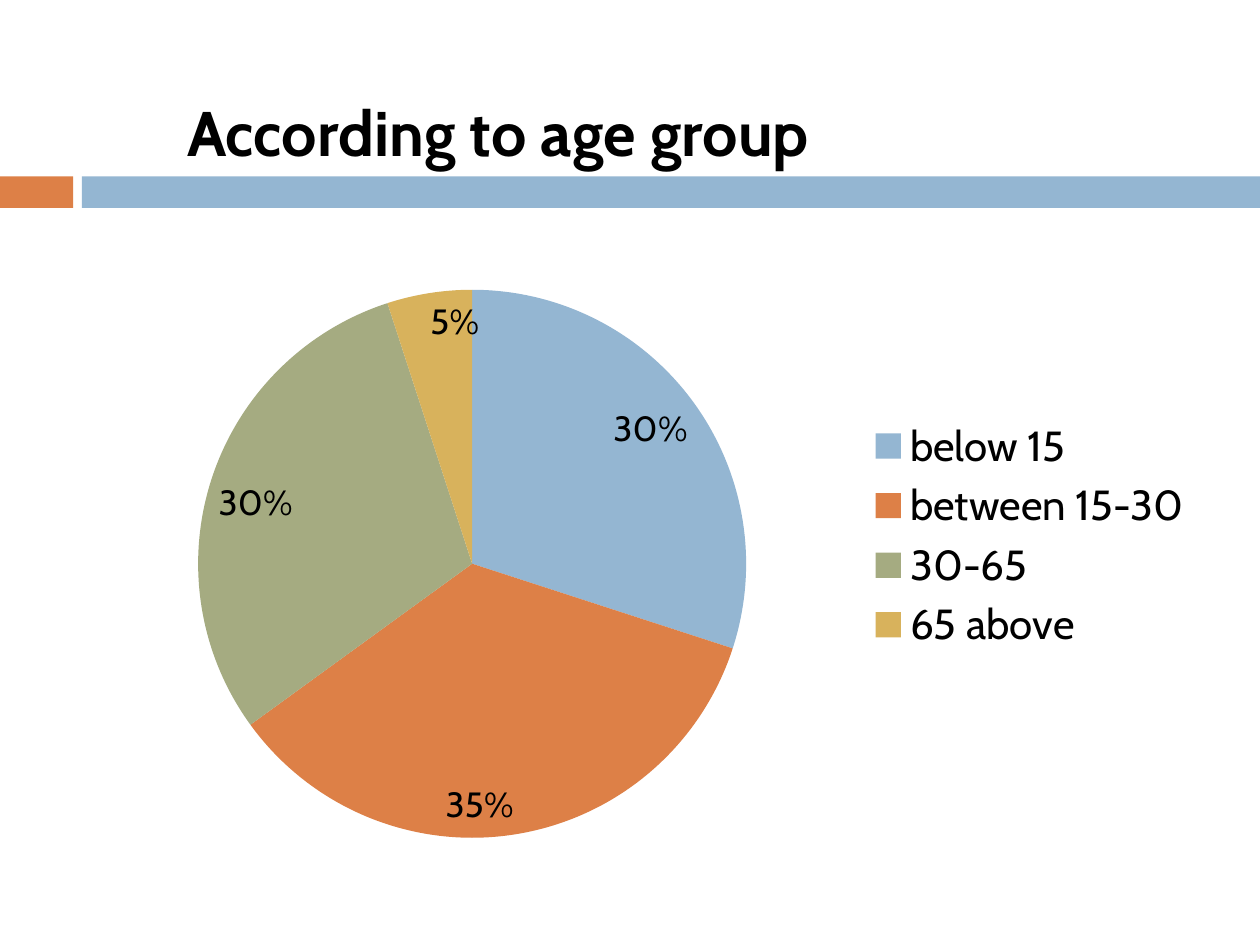
from pptx import Presentation
from pptx.chart.data import CategoryChartData
from pptx.dml.color import RGBColor
from pptx.enum.chart import XL_CHART_TYPE as ChartType
from pptx.enum.chart import XL_LABEL_POSITION as LabelPosition
from pptx.enum.chart import XL_LEGEND_POSITION as LegendPosition
from pptx.enum.shapes import MSO_SHAPE as Shape
from pptx.enum.text import MSO_ANCHOR as Anchor
from pptx.enum.text import PP_ALIGN as Align
from pptx.oxml import parse_xml
from pptx.oxml.ns import nsdecls
from pptx.util import Inches, Pt

FONT = "Cabin"
BLACK, BLUE, ORANGE, GREEN, YELLOW = "000000", "94B6D2", "DD8047", "A5AB81", "D8B25C"


def color(hex_string):
    return RGBColor.from_string(hex_string)


def style_font(font, size, bold=False):
    font.name = FONT
    font.size = Pt(size)
    font.bold = bold
    font.color.rgb = color(BLACK)


presentation = Presentation()
presentation.slide_width = Inches(10)
presentation.slide_height = Inches(7.5)
slide = presentation.slides.add_slide(presentation.slide_layouts[5])

# Header band
for left, width, fill in [(0, 0.58, ORANGE), (0.65, 9.35, BLUE)]:
    bar = slide.shapes.add_shape(
        Shape.RECTANGLE, Inches(left), Inches(1.4), Inches(width), Inches(0.25))
    bar.shadow.inherit = False
    bar.fill.solid()
    bar.fill.fore_color.rgb = color(fill)
    bar.line.fill.background()

# Age group pie chart
age_groups = [
    ("below 15", 0.3, BLUE),
    ("between 15-30", 0.35, ORANGE),
    ("30-65", 0.3, GREEN),
    ("65 above", 0.05, YELLOW),
]
chart_data = CategoryChartData(number_format="0%")
chart_data.categories = [name for name, share, fill in age_groups]
chart_data.add_series("Series 1", [share for name, share, fill in age_groups])
chart = slide.shapes.add_chart(
    ChartType.PIE, Inches(0.67), Inches(1.75), Inches(8.92), Inches(5), chart_data).chart
chart.has_title = False
style_font(chart.font, 10)

plot = chart.plots[0]
plot.vary_by_categories = True
for index, (name, share, fill) in enumerate(age_groups):
    slice_fill = plot.series[0].points[index].format.fill
    slice_fill.solid()
    slice_fill.fore_color.rgb = color(fill)

# Percentage labels
plot.has_data_labels = True
labels = plot.data_labels
labels.show_value = True
labels.number_format = "0%"
labels.number_format_is_linked = False
labels.position = LabelPosition.INSIDE_END
style_font(labels.font, 20)

# Legend
chart.has_legend = True
chart.legend.position = LegendPosition.RIGHT
chart.legend.include_in_layout = False
style_font(chart.legend.font, 24)

# Pie position as fractions of the chart frame
plot_area = plot._element.getparent()
for layout in plot_area.findall("{*}layout"):
    plot_area.remove(layout)
plot_area.insert(0, parse_xml(
    f'<c:layout {nsdecls("c")}><c:manualLayout><c:layoutTarget val="inner"/>'
    '<c:xMode val="edge"/><c:yMode val="edge"/><c:x val="0.1"/><c:y val="0.11"/>'
    '<c:w val="0.49"/><c:h val="0.87"/></c:manualLayout></c:layout>'))

# Title
title = slide.shapes.title
title.left, title.top = Inches(1.33), Inches(0.75)
title.width, title.height = Inches(5.25), Inches(0.58)
title.text_frame.text = "According to age group"
title.text_frame.vertical_anchor = Anchor.MIDDLE
paragraph = title.text_frame.paragraphs[0]
paragraph.alignment = Align.CENTER
style_font(paragraph.runs[0].font, 36, bold=True)

presentation.save("out.pptx")
